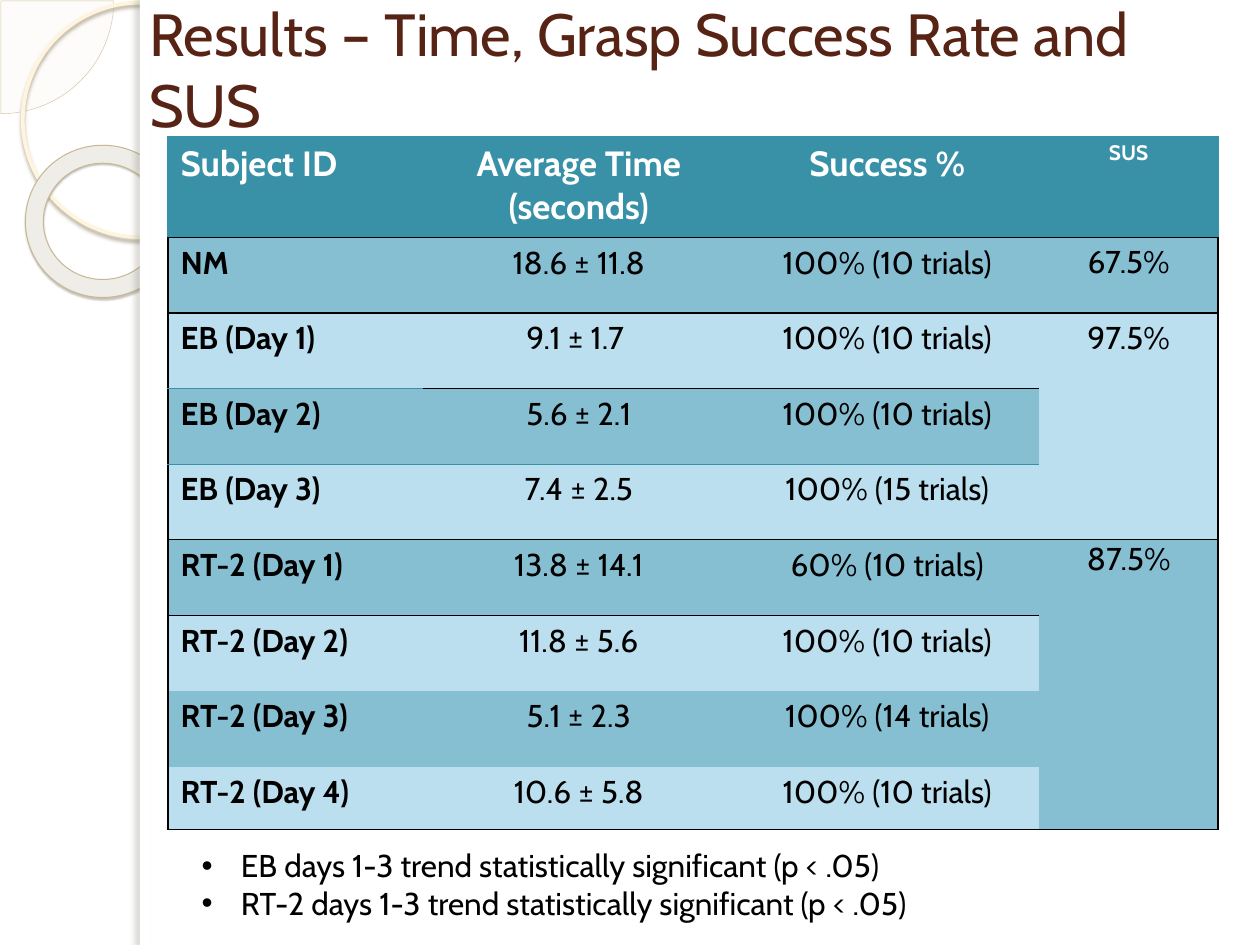
from typing import NamedTuple, Optional

from lxml.etree import SubElement
from pptx import Presentation
from pptx.dml.color import RGBColor
from pptx.enum.shapes import MSO_SHAPE
from pptx.enum.text import MSO_ANCHOR, MSO_AUTO_SIZE, PP_ALIGN
from pptx.oxml.ns import qn
from pptx.util import Pt

FONT = "Cabin"
WHITE = RGBColor(0xFF, 0xFF, 0xFF)
BLACK = RGBColor(0x00, 0x00, 0x00)
BROWN = RGBColor(0x57, 0x23, 0x14)
TEAL = RGBColor(0x38, 0x91, 0xA7)
MID = RGBColor(0x87, 0xBF, 0xD2)
PALE = RGBColor(0xBB, 0xDF, 0xEE)
CREAM = RGBColor(0xFE, 0xFC, 0xFA)
SAND = RGBColor(0xD3, 0xC3, 0x9F)
IVORY = RGBColor(0xFF, 0xF5, 0xDE)
PEARL = RGBColor(0xEE, 0xED, 0xE8)
KHAKI = RGBColor(0xC7, 0xB8, 0x93)
NO_STYLE = "{2D5ABB26-0587-4C30-8999-92F81FD0307C}"


class Shade(NamedTuple):
    color: RGBColor
    alpha: int
    blur: float
    dist: float
    angle: int


class Decor(NamedTuple):
    kind: MSO_SHAPE
    box: tuple[float, float, float, float]
    fill: Optional[RGBColor] = None
    line: Optional[RGBColor] = None
    width: float = 0
    adjust: tuple[float, ...] = ()
    shade: Optional[Shade] = None


class Rule(NamedTuple):
    color: RGBColor
    width: float


class Row(NamedTuple):
    subject: str
    time: str
    rate: str
    sus: str = ""


DECOR = [
    Decor(MSO_SHAPE.PIE, (-64, -64, 129, 129), CREAM, SAND, 0.25, (0, 54)),
    Decor(MSO_SHAPE.OVAL, (13, 1.5, 134, 134), None, IVORY, 2.15, (),
          Shade(RGBColor(0xB0, 0xA6, 0x8F), 85, 2, 2, 90)),
    Decor(MSO_SHAPE.DONUT, (14.5, 83, 88.5, 87), PEARL, KHAKI, 0.58, (0.118,),
          Shade(RGBColor(0x5A, 0x54, 0x44), 35, 1, 1.2, 75)),
    Decor(MSO_SHAPE.RECTANGLE, (80, 0, 640, 540), WHITE),
    Decor(MSO_SHAPE.RECTANGLE, (80, 0, 6, 540), WHITE,
          shade=Shade(RGBColor(0x73, 0x6F, 0x63), 25, 3, 3, 180)),
]
ROWS = [
    Row("Subject ID", "Average Time (seconds)", "Success %", "SUS"),
    Row("NM", "18.6 ± 11.8", "100% (10 trials)", "67.5%"),
    Row("EB (Day 1)", "9.1 ± 1.7 ", "100% (10 trials)", "97.5%"),
    Row("EB (Day 2)", "5.6 ± 2.1", "100% (10 trials)"),
    Row("EB (Day 3)", "7.4 ± 2.5", "100% (15 trials)"),
    Row("RT-2 (Day 1)", "13.8 ± 14.1", "60% (10 trials)", "87.5%"),
    Row("RT-2 (Day 2)", "11.8 ± 5.6", "100% (10 trials)"),
    Row("RT-2 (Day 3)", "5.1 ± 2.3", "100% (14 trials)"),
    Row("RT-2 (Day 4)", "10.6 ± 5.8", "100% (10 trials)"),
]
WIDTHS = (145.5, 178.5, 174, 102)
HEIGHTS = (57.6, *[43.2] * 7, 36)
SPANS = ((2, 4), (5, 8))
GROUP_ENDS = (0, 1, 4, 8)
STRONG, THIN = Rule(BLACK, 1), Rule(TEAL, 0.75)
NOTES = ["EB days 1-3 trend statistically significant (p < .05)",
         "RT-2 days 1-3 trend statistically significant (p < .05)"]


def add_color(parent, color: RGBColor):
    return SubElement(parent, qn("a:srgbClr"), val=str(color))


def add_run(para, text: str, size: float, color: RGBColor, bold: bool = False) -> None:
    run = para.add_run()
    run.text = text
    font = run.font
    font.name, font.size, font.bold = FONT, Pt(size), bold
    font.color.rgb = color


def place(shape, left: float, top: float, width: float, height: float) -> None:
    shape.left, shape.top = Pt(left), Pt(top)
    shape.width, shape.height = Pt(width), Pt(height)


def add_shade(shape, shade: Shade) -> None:
    effects = shape._element.spPr.find(qn("a:effectLst"))
    outer = SubElement(effects, qn("a:outerShdw"), blurRad=str(Pt(shade.blur)),
                       dist=str(Pt(shade.dist)), dir=str(shade.angle * 60000),
                       algn="tl", rotWithShape="0")
    color = add_color(outer, shade.color)
    SubElement(color, qn("a:alpha"), val=str(shade.alpha * 1000))


def add_decor(slide, item: Decor) -> None:
    shape = slide.shapes.add_shape(item.kind, *[Pt(n) for n in item.box])
    for i, value in enumerate(item.adjust):
        shape.adjustments[i] = value
    if item.fill is None:
        shape.fill.background()
    else:
        shape.fill.solid()
        shape.fill.fore_color.rgb = item.fill
    if item.line is None:
        shape.line.fill.background()
    else:
        shape.line.color.rgb = item.line
        shape.line.width = Pt(item.width)
    shape.shadow.inherit = False
    if item.shade:
        add_shade(shape, item.shade)


def rule_below(row: int, col: int) -> Optional[Rule]:
    """Groups end in black; days within EB are parted by thinner rules."""
    if row in GROUP_ENDS or (col == 3 and row in (2, 5)):
        return STRONG
    if col < 3 and row in (2, 3):
        return STRONG if row == 2 and col > 0 else THIN
    return None


def add_rules(cell, row: int, col: int) -> None:
    edge = STRONG if row else THIN
    sides = {
        "L": edge if col == 0 else None,
        "R": edge if col == 3 else None,
        "T": rule_below(row - 1, col) if row else THIN,
        "B": rule_below(row, col),
    }
    props = cell._tc.get_or_add_tcPr()
    for side, rule in sides.items():
        if rule:
            line = SubElement(props, qn(f"a:ln{side}"), w=str(Pt(rule.width)))
            add_color(SubElement(line, qn("a:solidFill")), rule.color)


def fill_cell(cell, text: str, row: int, col: int) -> None:
    add_rules(cell, row, col)
    band = row if col < 3 or row < 5 else 5
    cell.fill.solid()
    cell.fill.fore_color.rgb = TEAL if row == 0 else MID if band % 2 else PALE
    para = cell.text_frame.paragraphs[0]
    if col:
        para.alignment = PP_ALIGN.CENTER
    if col == 3:
        cell.margin_left = cell.margin_right = Pt(0)
        cell.margin_top = cell.margin_bottom = Pt(0)
        if row < 5:
            para.line_spacing, para.space_after = 1.15, Pt(10)
    if text:
        size = 18 if row else 12 if col == 3 else 20
        add_run(para, text, size, BLACK if row else WHITE, row == 0 or col == 0)


def add_results(slide) -> None:
    frame = slide.shapes.add_table(len(ROWS), len(WIDTHS), Pt(96), Pt(78),
                                   Pt(sum(WIDTHS)), Pt(sum(HEIGHTS)))
    table = frame.table
    table.first_row = table.horz_banding = False
    table._tbl.tblPr.find(qn("a:tableStyleId")).text = NO_STYLE
    for column, width in zip(table.columns, WIDTHS):
        column.width = Pt(width)
    for r, (line, height) in enumerate(zip(ROWS, HEIGHTS)):
        table.rows[r].height = Pt(height)
        for c, text in enumerate(line):
            fill_cell(table.cell(r, c), text, r, c)
    for first, last in SPANS:
        table.cell(first, 3).merge(table.cell(last, 3))


def set_title(title) -> None:
    place(title, 78, 0, 642, 78)
    frame = title.text_frame
    frame.auto_size = MSO_AUTO_SIZE.NONE
    frame.vertical_anchor = MSO_ANCHOR.MIDDLE
    para = frame.paragraphs[0]
    para.alignment = PP_ALIGN.LEFT
    add_run(para, "Results – Time, Grasp Success Rate and SUS", 34, BROWN)


def set_notes(body) -> None:
    place(body, 108, 480, 576, 51)
    frame = body.text_frame
    frame.auto_size = MSO_AUTO_SIZE.NONE
    for i, text in enumerate(NOTES):
        para = frame.add_paragraph() if i else frame.paragraphs[0]
        para.space_before = Pt(0)
        props = para._p.get_or_add_pPr()
        props.set("marL", str(Pt(22.5)))
        props.set("indent", str(Pt(-22.5)))
        SubElement(props, qn("a:buFont"), typeface="Arial")
        SubElement(props, qn("a:buChar"), char="•")
        add_run(para, text, 18, BLACK)


def main() -> None:
    deck = Presentation()
    deck.slide_width, deck.slide_height = Pt(720), Pt(540)
    slide = deck.slides.add_slide(deck.slide_layouts[1])
    title, body = slide.placeholders
    for item in DECOR:
        add_decor(slide, item)
    tree = slide.shapes._spTree
    tree.append(title._element)  # keep the text in front of the white panel
    set_title(title)
    add_results(slide)
    tree.append(body._element)
    set_notes(body)
    deck.save("out.pptx")


if __name__ == "__main__":
    main()
